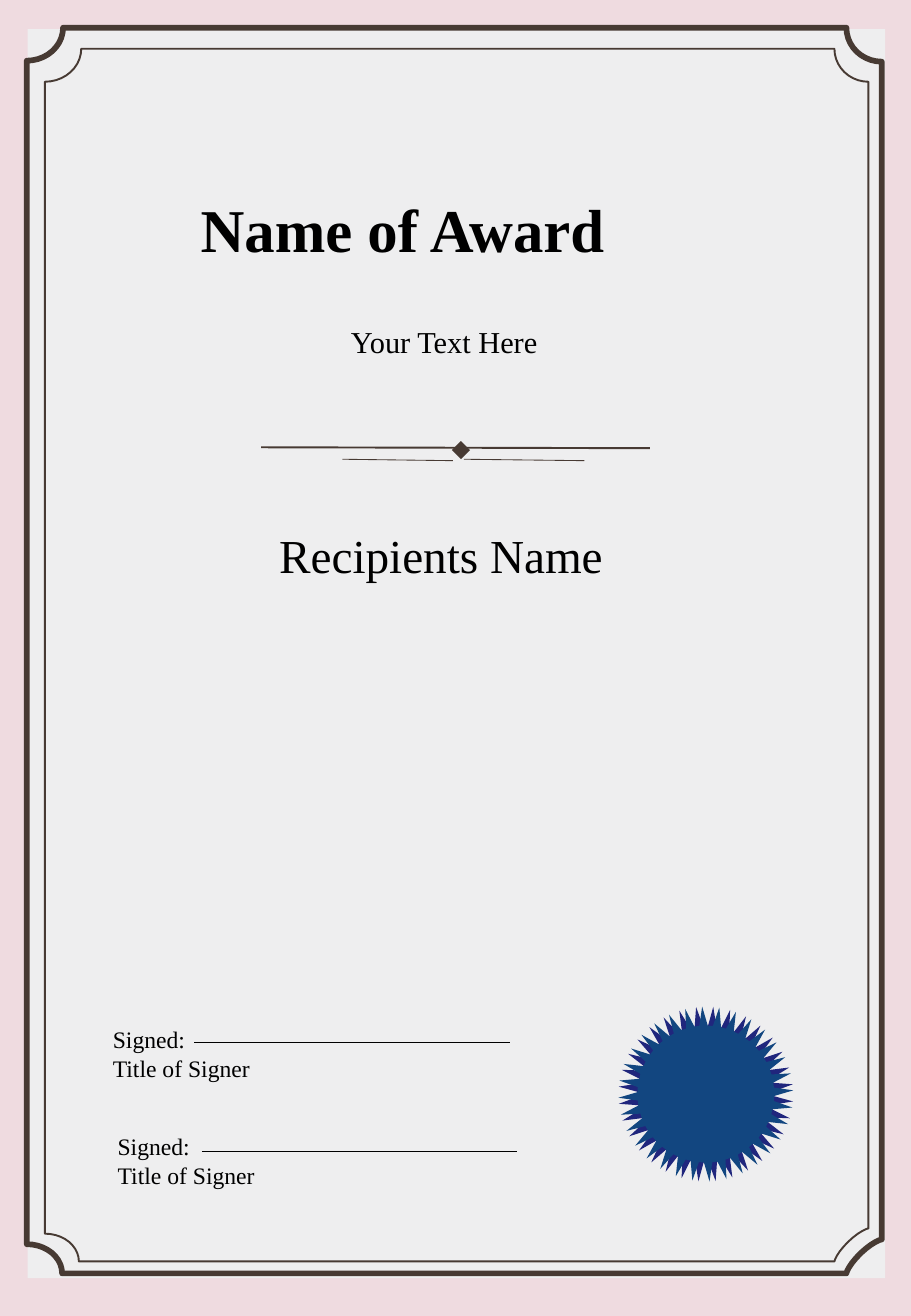
from dataclasses import dataclass
from math import cos, radians, sin

from lxml.etree import SubElement
from pptx import Presentation
from pptx.dml.color import RGBColor
from pptx.enum.shapes import MSO_CONNECTOR, MSO_SHAPE
from pptx.enum.text import MSO_ANCHOR, MSO_AUTO_SIZE, PP_ALIGN
from pptx.oxml.ns import qn
from pptx.shapes.base import BaseShape
from pptx.shapes.shapetree import GroupShapes, SlideShapes
from pptx.util import Cm, Pt

COLOURS = {"margin": "EFDBE0", "panel": "EEEEEF", "frame": "473A33", "ink": "000000",
           "seal_back": "20267D", "seal_front": "124680"}
FONT = "Times New Roman"
PAGE_WIDTH, PAGE_HEIGHT = 19.05, 27.51
ARC_STEPS = 10
SEAL_X, SEAL_Y, SEAL_TIP, SEAL_VALLEY, SEAL_TEETH = 14.76, 22.87, 1.83, 1.43, 32

Point = tuple[float, float]


@dataclass
class Corner:
    """A scooped frame corner; a higher flatness brings its arc closer to a chord."""
    x: float
    y: float
    width: float
    height: float
    start_angle: int
    end_angle: int
    flatness: float = 1

    def points(self) -> list[Point]:
        turn = (self.end_angle - self.start_angle) / ARC_STEPS
        angles = [radians(self.start_angle + step * turn) for step in range(ARC_STEPS + 1)]
        return [(self.x + self.width * self.bend(cos(angle)),
                 self.y + self.height * self.bend(sin(angle))) for angle in angles]

    def bend(self, value: float) -> float:
        return abs(value) ** self.flatness * (1 if value > 0 else -1)


@dataclass
class Frame:
    """A border line with its four corner sizes, clockwise from the top left."""
    left: float
    top: float
    right: float
    bottom: float
    corners: list[Point]
    weight: float

    def points(self) -> list[Point]:
        places = [(self.left, self.top, 90, 0, 1), (self.right, self.top, 180, 90, 1),
                  (self.right, self.bottom, 270, 180, 1.5), (self.left, self.bottom, 360, 270, 1)]
        return [point for (x, y, start, end, flatness), (width, height) in zip(places, self.corners)
                for point in Corner(x, y, width, height, start, end, flatness).points()]


@dataclass
class Rule:
    """A straight line."""
    start: Point
    end: Point
    colour: str
    weight: float


@dataclass
class Label:
    """A block of text lines."""
    lines: list[str]
    left: float
    top: float
    width: float
    height: float
    size: int
    bold: bool = False
    line_spacing: float = 1


FRAMES = [
    Frame(0.56, 0.58, 18.44, 26.62, [(0.76, 0.69), (0.74, 0.71), (0.74, 0.71), (0.74, 0.61)], 3.38),
    Frame(0.94, 1.02, 18.16, 26.37, [(0.76, 0.69), (0.71, 0.69), (0.71, 0.69), (0.71, 0.58)], 1.13),
]
SIGNATURE_RULES = [Rule((4.06, 21.79), (10.67, 21.79), "ink", 0.5),
                   Rule((4.22, 24.08), (10.82, 24.08), "ink", 0.5)]
DIVIDER_RULES = [Rule((5.46, 9.35), (13.59, 9.37), "frame", 1.13),
                 Rule((9.7, 9.6), (12.22, 9.63), "frame", 0.5),
                 Rule((7.16, 9.6), (9.47, 9.63), "frame", 0.5)]
TITLE = Label(["Name of Award"], 3.94, 3.89, 11.18, 1.78, 36, bold=True)
SIGNER_LINES = ["Signed:", "Title of Signer"]
LABELS = [Label(["Your Text Here"], 7.09, 6.63, 4.9, 1.02, 18),
          Label(["Recipients Name"], 5.59, 10.87, 7.87, 1.45, 28),
          Label(SIGNER_LINES, 2.11, 21.51, 6.15, 1.24, 14, line_spacing=0.6),
          Label(SIGNER_LINES, 2.21, 23.75, 6.15, 1.24, 14, line_spacing=0.6)]


def colour(name: str) -> RGBColor:
    """Return a named colour."""
    return RGBColor.from_string(COLOURS[name])


def paint(shape: BaseShape, fill: str) -> None:
    """Give a shape a plain fill without line or shadow."""
    shape.shadow.inherit = False
    shape.fill.solid()
    shape.fill.fore_color.rgb = colour(fill)
    shape.line.fill.background()


def add_outline(shapes: SlideShapes, points: list[Point]) -> BaseShape:
    """Add a closed polygon."""
    corners = [(Cm(x), Cm(y)) for x, y in points]
    builder = shapes.build_freeform(*corners[0])
    builder.add_line_segments(corners[1:], close=True)
    return builder.convert_to_shape()


def add_frame(shapes: SlideShapes, frame: Frame) -> None:
    """Add an unfilled border."""
    shape = add_outline(shapes, frame.points())
    shape.shadow.inherit = False
    shape.fill.background()
    shape.line.color.rgb = colour("frame")
    shape.line.width = Pt(frame.weight)


def add_burst(shapes: SlideShapes, fill: str, first_angle: float) -> None:
    """Add one toothed layer of the seal."""
    points = []
    for tooth in range(SEAL_TEETH):
        tip = first_angle + tooth * 360 / SEAL_TEETH
        for angle, radius in ((tip - 4, SEAL_VALLEY), (tip, SEAL_TIP), (tip + 3, SEAL_VALLEY)):
            points.append((SEAL_X + radius * cos(radians(angle)),
                           SEAL_Y - radius * sin(radians(angle))))
    paint(add_outline(shapes, points), fill)


def add_rule(shapes: SlideShapes | GroupShapes, rule: Rule) -> None:
    """Add a straight line without shadow."""
    ends = [Cm(value) for value in rule.start + rule.end]
    line = shapes.add_connector(MSO_CONNECTOR.STRAIGHT, *ends)
    line.line.color.rgb = colour(rule.colour)
    line.line.width = Pt(rule.weight)
    SubElement(line._element.spPr, qn("a:effectLst"))


def write_label(box: BaseShape, label: Label) -> None:
    """Place a text shape and fill it with its lines."""
    box.left, box.top = Cm(label.left), Cm(label.top)
    box.width, box.height = Cm(label.width), Cm(label.height)
    frame = box.text_frame
    frame.text = "\n".join(label.lines)
    frame.word_wrap = True
    frame.auto_size = MSO_AUTO_SIZE.SHAPE_TO_FIT_TEXT
    frame.vertical_anchor = MSO_ANCHOR.TOP
    for para in frame.paragraphs:
        para.alignment = PP_ALIGN.LEFT
        para.line_spacing = label.line_spacing
        para.space_before = Pt(label.size / 2)
        para.font.name, para.font.size, para.font.bold = FONT, Pt(label.size), label.bold
        para.font.color.rgb = colour("ink")


def main() -> None:
    """Build the award certificate."""
    deck = Presentation()
    deck.slide_width, deck.slide_height = Cm(PAGE_WIDTH), Cm(PAGE_HEIGHT)
    page = deck.slides.add_slide(deck.slide_layouts[5])
    shapes = page.shapes
    for fill, area in (("margin", (0, 0, PAGE_WIDTH, PAGE_HEIGHT)),
                       ("panel", (0.58, 0.61, 17.93, 26.11))):
        paint(shapes.add_shape(MSO_SHAPE.RECTANGLE, *map(Cm, area)), fill)
    for frame in FRAMES:
        add_frame(shapes, frame)
    for rule in SIGNATURE_RULES:
        add_rule(shapes, rule)
    divider = shapes.add_group_shape().shapes
    for rule in DIVIDER_RULES:
        add_rule(divider, rule)
    paint(divider.add_shape(MSO_SHAPE.DIAMOND, Cm(9.45), Cm(9.22), Cm(0.38), Cm(0.38)), "frame")
    add_burst(shapes, "seal_back", -4.85)
    add_burst(shapes, "seal_front", -8.85)
    write_label(shapes.title, TITLE)
    shapes._spTree.append(shapes.title._element)
    for label in LABELS:
        write_label(shapes.add_textbox(0, 0, 0, 0), label)
    deck.save("out.pptx")


if __name__ == "__main__":
    main()
